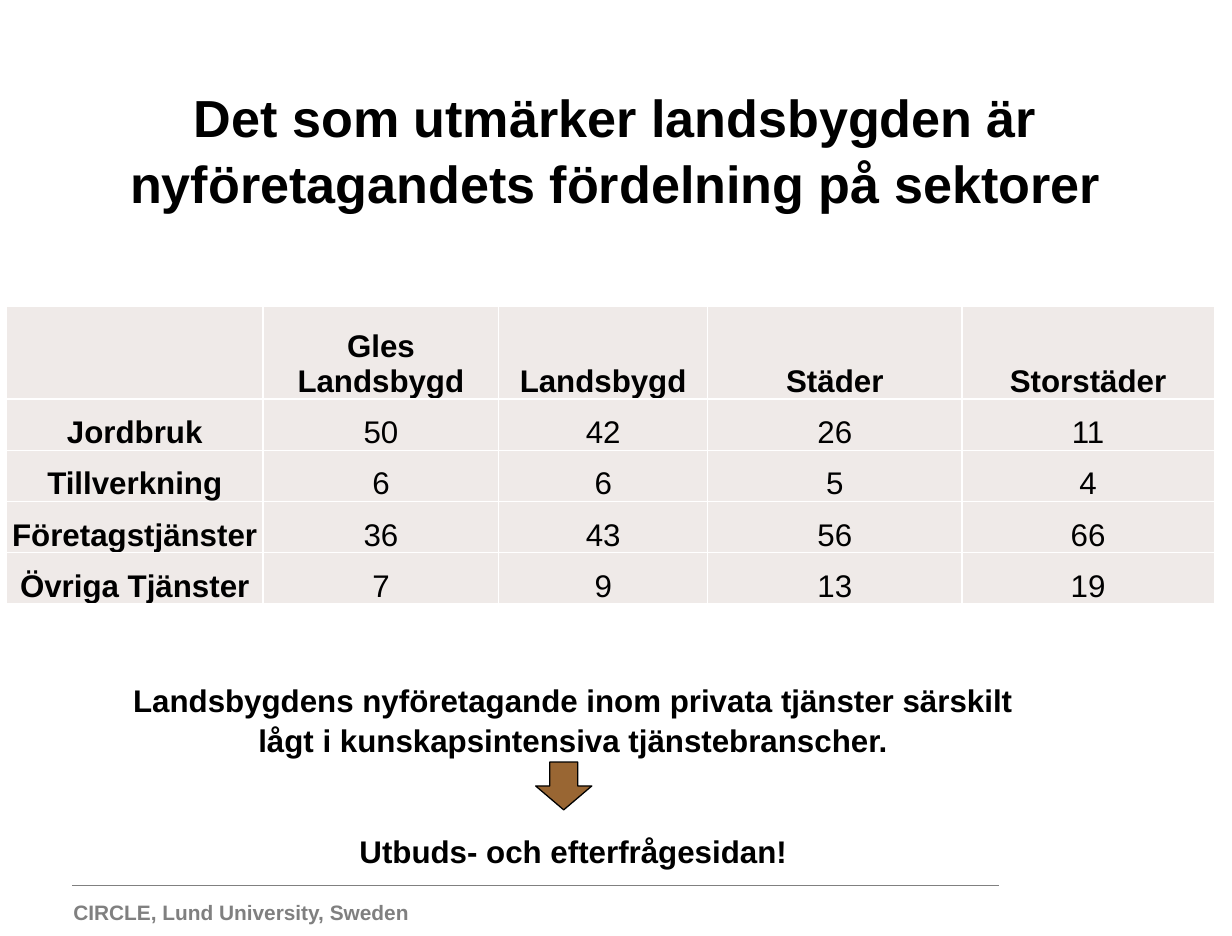
from dataclasses import dataclass

from lxml import etree
from pptx import Presentation
from pptx.dml.color import RGBColor
from pptx.enum.shapes import MSO_CONNECTOR, MSO_SHAPE
from pptx.enum.text import MSO_ANCHOR, PP_ALIGN
from pptx.oxml.ns import qn
from pptx.util import Cm, Pt

LEFT, CENTER = PP_ALIGN.LEFT, PP_ALIGN.CENTER
TOP, MIDDLE, BOTTOM = MSO_ANCHOR.TOP, MSO_ANCHOR.MIDDLE, MSO_ANCHOR.BOTTOM
STRAIGHT = MSO_CONNECTOR.STRAIGHT
DOWN_ARROW = MSO_SHAPE.DOWN_ARROW


@dataclass(frozen=True)
class Theme:
    font: str = "Arial"
    text: str = "000000"
    muted: str = "808080"
    cell: str = "EFEAE8"
    border: str = "FFFFFF"
    arrow: str = "996633"
    title_size: int = 30
    body_size: int = 18
    footer_size: int = 12
    line_spacing: float = 1.05


THEME = Theme()

SECTOR_ROWS = [
    ["", "Gles Landsbygd", "Landsbygd", "Städer", "Storstäder"],
    ["Jordbruk", "50", "42", "26", "11"],
    ["Tillverkning", "6", "6", "5", "4"],
    ["Företagstjänster", "36", "43", "56", "66"],
    ["Övriga Tjänster", "7", "9", "13", "19"],
]
COLUMN_WIDTHS = [5.21, 4.78, 4.24, 5.16, 5.12]
HEADER_HEIGHT, ROW_HEIGHT = 1.88, 1.04


def rgb(color):
    return RGBColor.from_string(color)


def write_text(text_frame, text, size=THEME.body_size, color=THEME.text,
               bold=True, align=CENTER, spacing=THEME.line_spacing):
    paragraph = text_frame.paragraphs[0]
    paragraph.alignment = align
    paragraph.line_spacing = spacing
    run = paragraph.add_run()
    run.text = text
    run.font.name = THEME.font
    run.font.size = Pt(size)
    run.font.bold = bold
    run.font.color.rgb = rgb(color)


def add_text(slide, text, left, top, width, height, anchor=TOP, wrap=True, **text_format):
    box = slide.shapes.add_textbox(Cm(left), Cm(top), Cm(width), Cm(height))
    box.text_frame.word_wrap = wrap
    box.text_frame.vertical_anchor = anchor
    write_text(box.text_frame, text, **text_format)


def add_rule(slide, left, right, y):
    rule = slide.shapes.add_connector(STRAIGHT, Cm(left), Cm(y), Cm(right), Cm(y))
    rule.line.color.rgb = rgb(THEME.muted)
    rule.line.width = Pt(0.5)
    etree.SubElement(rule._element.spPr, qn("a:effectLst"))


def add_arrow(slide, left, top, width, height):
    arrow = slide.shapes.add_shape(DOWN_ARROW, Cm(left), Cm(top), Cm(width), Cm(height))
    arrow.shadow.inherit = False
    arrow.fill.solid()
    arrow.fill.fore_color.rgb = rgb(THEME.arrow)
    arrow.line.color.rgb = rgb(THEME.text)
    arrow.line.width = Pt(0.75)


def set_borders(cell):
    properties = cell._tc.get_or_add_tcPr()
    for side in ("a:lnL", "a:lnR", "a:lnT", "a:lnB"):
        border = etree.SubElement(properties, qn(side), w=str(Pt(1)))
        fill = etree.SubElement(border, qn("a:solidFill"))
        etree.SubElement(fill, qn("a:srgbClr"), val=THEME.border)


def format_cell(cell):
    set_borders(cell)
    cell.fill.solid()
    cell.fill.fore_color.rgb = rgb(THEME.cell)
    cell.vertical_anchor = BOTTOM
    cell.margin_left = cell.margin_right = cell.margin_top = Cm(0.03)
    cell.margin_bottom = Cm(0)


def add_sector_table(slide, left, top):
    row_heights = [HEADER_HEIGHT] + [ROW_HEIGHT] * (len(SECTOR_ROWS) - 1)
    table = slide.shapes.add_table(
        len(row_heights), len(COLUMN_WIDTHS), Cm(left), Cm(top),
        Cm(sum(COLUMN_WIDTHS)), Cm(sum(row_heights))).table
    for column, width in zip(table.columns, COLUMN_WIDTHS):
        column.width = Cm(width)
    for row, height in zip(table.rows, row_heights):
        row.height = Cm(height)
    for row_index, values in enumerate(SECTOR_ROWS):
        for column_index, value in enumerate(values):
            cell = table.cell(row_index, column_index)
            format_cell(cell)
            if value:
                heading = row_index == 0 or column_index == 0
                write_text(cell.text_frame, value, bold=heading, spacing=1.0)


def main():
    presentation = Presentation()
    presentation.slide_width = Cm(25)
    presentation.slide_height = Cm(19)
    slide = presentation.slides.add_slide(presentation.slide_layouts[6])

    add_text(slide, "CIRCLE, Lund University, Sweden", 1.24, 18.11, 7.39, 0.76,
             wrap=False, size=THEME.footer_size, color=THEME.muted, align=LEFT)
    add_rule(slide, 1.47, 20.27, 17.98)
    add_text(slide, "Det som utmärker landsbygden är nyföretagandets fördelning på sektorer",
             1.24, 1.42, 22.5, 3.18, anchor=MIDDLE, size=THEME.title_size)
    add_sector_table(slide, 0.13, 6.22)
    add_text(slide, "Landsbygdens nyföretagande inom privata tjänster särskilt "
             "lågt i kunskapsintensiva tjänstebranscher.", 1.93, 13.67, 19.4, 1.8)
    add_arrow(slide, 10.87, 15.47, 1.14, 0.97)
    add_text(slide, "Utbuds- och efterfrågesidan!", 3.81, 16.74, 15.65, 1.02)

    presentation.save("out.pptx")


if __name__ == "__main__":
    main()
